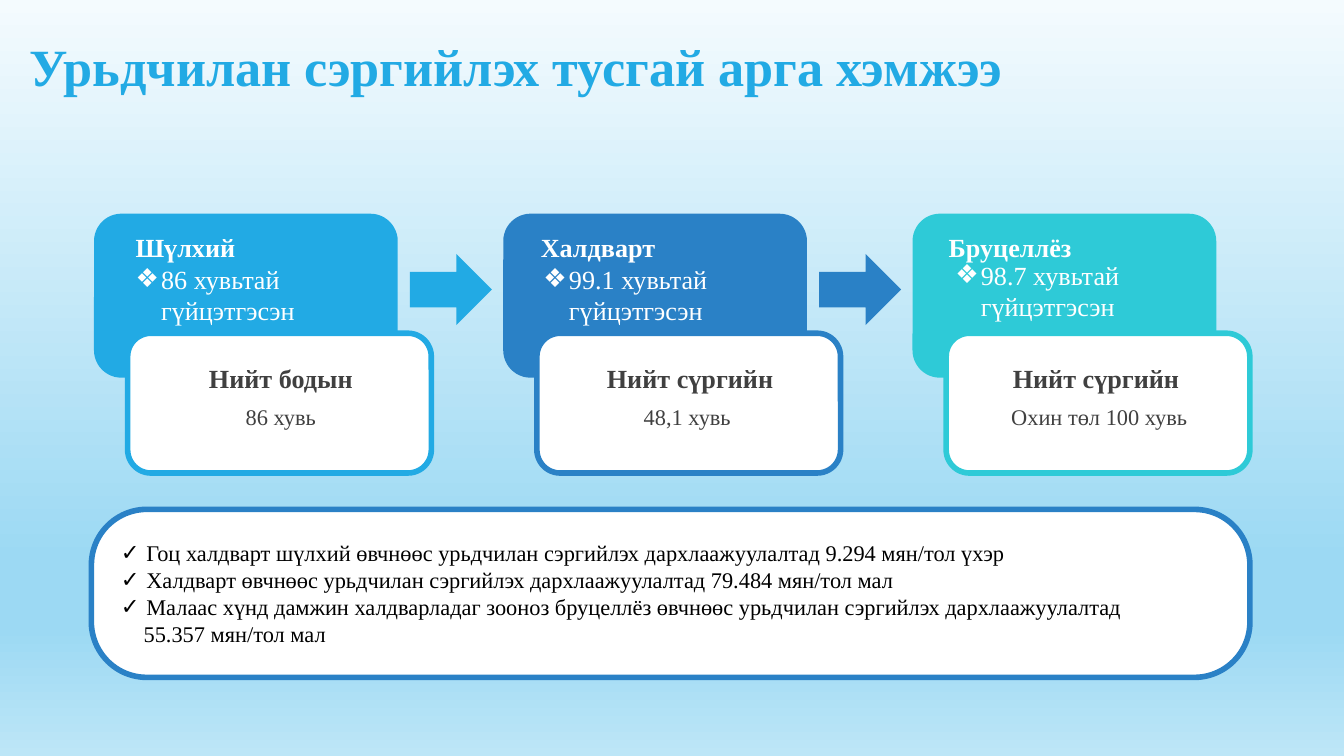
from dataclasses import dataclass

from lxml import etree
from pptx import Presentation
from pptx.dml.color import RGBColor
from pptx.enum.shapes import MSO_SHAPE
from pptx.enum.text import MSO_ANCHOR, MSO_AUTO_SIZE, PP_ALIGN
from pptx.oxml.ns import qn
from pptx.util import Inches, Pt

ROUNDED = MSO_SHAPE.ROUNDED_RECTANGLE
ARROW = MSO_SHAPE.RIGHT_ARROW
MIDDLE = MSO_ANCHOR.MIDDLE
LEFT, CENTER = PP_ALIGN.LEFT, PP_ALIGN.CENTER


@dataclass(frozen=True)
class Theme:
    font: str = "Times New Roman"
    bullet_font: str = "Arial"
    sky: str = "22AAE4"
    blue: str = "2A81C6"
    teal: str = "2ECAD7"
    white: str = "FFFFFF"
    black: str = "000000"
    gray: str = "404040"
    background: tuple = ((0, "F4FBFE"), (74, "9CD9F3"), (83, "9CD9F3"), (100, "BDE6F7"))
    title_size: int = 28
    heading_size: int = 14
    body_size: int = 12
    border: int = 3
    hanging: float = 0.19


THEME = Theme()


@dataclass(frozen=True)
class Box:
    left: float
    top: float
    width: float
    height: float

    def lengths(self) -> list:
        return [Inches(v) for v in (self.left, self.top, self.width, self.height)]


@dataclass(frozen=True)
class Card:
    color: str
    disease: str
    result: str
    group: str
    share: str
    heading_shift: float
    result_shift: float
    result_top: float = 1.91


CARDS = (
    Card(THEME.sky, "Шүлхий ", "86 хувьтай гүйцэтгэсэн",
         "Нийт бодын", "86 хувь", 0.21, 0.21),
    Card(THEME.blue, "Халдварт", "99.1 хувьтай гүйцэтгэсэн",
         "Нийт сүргийн", "48,1 хувь ", 0.18, 0.2),
    Card(THEME.teal, "Бруцеллёз", "98.7 хувьтай гүйцэтгэсэн",
         "Нийт сүргийн ", "Охин төл 100 хувь", 0.17, 0.22, 1.88),
)
FIRST_LEFT, LAST_LEFT = 0.7, 6.79
PITCH = (LAST_LEFT - FIRST_LEFT) / (len(CARDS) - 1)

VACCINATIONS = (
    "Гоц халдварт шүлхий өвчнөөс урьдчилан сэргийлэх дархлаажуулалтад 9.294 мян/тол үхэр",
    "Халдварт өвчнөөс урьдчилан сэргийлэх дархлаажуулалтад 79.484 мян/тол мал",
    "Малаас хүнд дамжин халдварладаг зооноз бруцеллёз өвчнөөс урьдчилан сэргийлэх дархлаажуулалтад",
)
LAST_LINE = "55.357 мян/тол мал"


def paint_background(page) -> None:
    fill = page.background.fill
    fill.gradient()
    fill.gradient_angle = 270
    stops = page.element.find(".//" + qn("a:gsLst"))
    for stop in list(stops):
        stops.remove(stop)
    for position, color in THEME.background:
        stop = etree.SubElement(stops, qn("a:gs"), pos=str(position * 1000))
        etree.SubElement(stop, qn("a:srgbClr"), val=color)


def write(para, text: str, size: int, color: str, bold: bool = False, align=LEFT) -> None:
    para.text = text
    para.alignment = align
    for span in para.runs:
        span.font.name = THEME.font
        span.font.size = Pt(size)
        span.font.bold = bold
        span.font.color.rgb = RGBColor.from_string(color)


def indent(para, left: float, bullet: str = "") -> None:
    """Indent a paragraph; a bullet hangs in the indent."""
    properties = para._p.get_or_add_pPr()
    properties.set("marL", str(Inches(left)))
    properties.set("indent", str(-Inches(left) if bullet else 0))
    if bullet:
        etree.SubElement(properties, qn("a:buFont"), typeface=THEME.bullet_font)
        etree.SubElement(properties, qn("a:buChar"), char=bullet)


def add_text(page, box: Box, text: str, size: int, color: str,
             bold: bool = False, align=LEFT):
    frame = page.shapes.add_textbox(*box.lengths()).text_frame
    frame.word_wrap = True
    para = frame.paragraphs[0]
    write(para, text, size, color, bold, align)
    return para


def add_block(page, kind, box: Box, fill: str, line: str = ""):
    shape = page.shapes.add_shape(kind, *box.lengths())
    shape.shadow.inherit = False
    shape.fill.solid()
    shape.fill.fore_color.rgb = RGBColor.from_string(fill)
    if line:
        shape.line.color.rgb = RGBColor.from_string(line)
        shape.line.width = Pt(THEME.border)
    else:
        shape.line.fill.background()
    return shape


def add_title(page, text: str) -> None:
    title = page.shapes.title
    title.left, title.top, title.width, title.height = Box(0.12, 0, 9.88, 0.97).lengths()
    frame = title.text_frame
    frame.auto_size = MSO_AUTO_SIZE.NONE
    frame.vertical_anchor = MIDDLE
    write(frame.paragraphs[0], text, THEME.title_size, THEME.sky, bold=True)


def add_card(page, card: Card, left: float) -> None:
    add_block(page, ROUNDED, Box(left, 1.59, 2.26, 1.22), card.color)
    add_block(page, ROUNDED, Box(left + 0.25, 2.48, 2.26, 1.04), THEME.white, card.color)
    result = add_text(page, Box(left + card.result_shift, card.result_top, 1.91, 0.57),
                      card.result, THEME.heading_size, THEME.white)
    indent(result, THEME.hanging, "❖")
    add_text(page, Box(left + card.heading_shift, 1.67, 1.91, 0.34),
             card.disease, THEME.heading_size, THEME.white, bold=True)
    inner = left + 0.47
    share = add_text(page, Box(inner, 2.95, 1.84, 0.43), card.share,
                     THEME.body_size, THEME.gray, align=CENTER)
    group = add_text(page, Box(inner, 2.65, 1.84, 0.28), card.group,
                     THEME.heading_size, THEME.gray, bold=True, align=CENTER)
    share.space_before = Pt(THEME.body_size * 0.2)
    group.space_before = Pt(THEME.heading_size * 0.2)


def add_summary(page) -> None:
    panel = add_block(page, ROUNDED, Box(0.68, 3.79, 8.62, 1.25), THEME.white, THEME.blue)
    panel.adjustments[0] = 0.33
    frame = panel.text_frame
    frame.word_wrap = True
    frame.vertical_anchor = MIDDLE
    frame.text = "\n".join((*VACCINATIONS, LAST_LINE))
    for para in frame.paragraphs:
        write(para, para.text, THEME.body_size, THEME.black)
    *items, last = frame.paragraphs
    for para in items:
        indent(para, THEME.hanging, "✓")
    indent(last, 0.17)


def main() -> None:
    deck = Presentation()
    deck.slide_width = Inches(10)
    deck.slide_height = deck.slide_width * 9 // 16
    page = deck.slides.add_slide(deck.slide_layouts[5])
    paint_background(page)
    add_title(page, "Урьдчилан сэргийлэх тусгай арга хэмжээ")
    for index, card in enumerate(CARDS):
        left = FIRST_LEFT + index * PITCH
        add_card(page, card, left)
        if index < len(CARDS) - 1:
            add_block(page, ARROW, Box(left + 2.35, 1.89, 0.61, 0.53), card.color)
    add_summary(page)
    deck.save("out.pptx")


if __name__ == "__main__":
    main()
